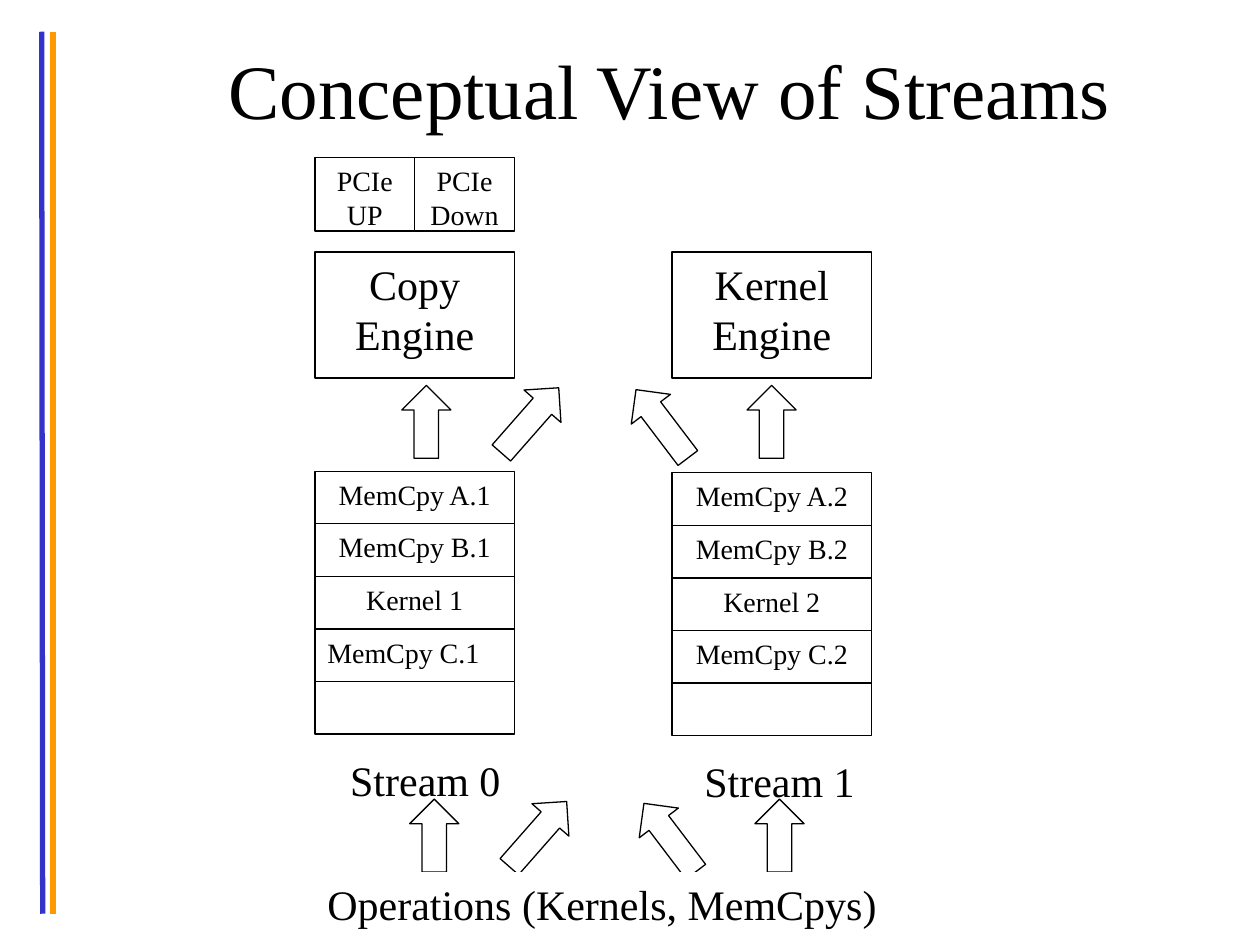
from dataclasses import dataclass

from lxml import etree
from pptx import Presentation
from pptx.dml.color import RGBColor
from pptx.enum.shapes import MSO_CONNECTOR, MSO_SHAPE
from pptx.enum.text import MSO_ANCHOR, MSO_AUTO_SIZE, PP_ALIGN
from pptx.oxml.ns import qn
from pptx.util import Cm, Pt

STRAIGHT = MSO_CONNECTOR.STRAIGHT
RECT, UP_ARROW = MSO_SHAPE.RECTANGLE, MSO_SHAPE.UP_ARROW
TOP, MIDDLE = MSO_ANCHOR.TOP, MSO_ANCHOR.MIDDLE
LEFT, CENTER = PP_ALIGN.LEFT, PP_ALIGN.CENTER
FIT_TEXT = MSO_AUTO_SIZE.SHAPE_TO_FIT_TEXT


@dataclass(frozen=True)
class Theme:
    font: str = "Times New Roman"
    ink: RGBColor = RGBColor(0x00, 0x00, 0x00)
    paper: RGBColor = RGBColor(0xFF, 0xFF, 0xFF)
    blue: RGBColor = RGBColor(0x33, 0x33, 0xCC)
    orange: RGBColor = RGBColor(0xFF, 0x99, 0x00)
    title: int = 44
    heading: int = 24
    body: int = 16
    outline: float = 0.75
    rail: int = 3


class Diagram:
    """Draws on one slide; all lengths are centimetres."""

    def __init__(self, slide, theme):
        self.shapes = slide.shapes
        self.theme = theme

    def add_text(self, shape, text, size, align, anchor=TOP, wrap=True):
        frame = shape.text_frame
        frame.word_wrap = wrap
        frame.vertical_anchor = anchor
        paragraph = frame.paragraphs[0]
        paragraph.alignment = align
        run = paragraph.add_run()
        run.text = text
        run.font.name = self.theme.font
        run.font.size = Pt(size)
        run.font.color.rgb = self.theme.ink
        return frame

    def outlined(self, kind, left, top, width, height):
        shape = self.shapes.add_shape(kind, Cm(left), Cm(top), Cm(width), Cm(height))
        shape.shadow.inherit = False
        shape.fill.background()
        shape.line.color.rgb = self.theme.ink
        shape.line.width = Pt(self.theme.outline)
        return shape

    def box(self, left, top, width, height, text="", size=None, align=CENTER):
        shape = self.outlined(RECT, left, top, width, height)
        if text:
            self.add_text(shape, text, size or self.theme.body, align)

    def arrow(self, left, top, height, angle=0):
        self.outlined(UP_ARROW, left, top, 0.99, height).rotation = angle

    def title(self, left, top, width, height, text):
        box = self.shapes.add_textbox(Cm(left), Cm(top), Cm(width), Cm(height))
        frame = self.add_text(box, text, self.theme.title, CENTER, MIDDLE)
        frame.margin_left = frame.margin_right = 0
        frame.margin_top = frame.margin_bottom = 0

    def label(self, left, top, width, height, text, filled=False):
        box = self.shapes.add_textbox(Cm(left), Cm(top), Cm(width), Cm(height))
        if filled:
            box.fill.solid()
            box.fill.fore_color.rgb = self.theme.paper
        frame = self.add_text(box, text, self.theme.heading, LEFT, wrap=False)
        frame.auto_size = FIT_TEXT

    def rail(self, x_top, x_bottom, color):
        line = self.shapes.add_connector(
            STRAIGHT, Cm(x_top), Cm(0.64), Cm(x_bottom), Cm(18.42))
        line.line.color.rgb = color
        line.line.width = Pt(self.theme.rail)
        etree.SubElement(line._element.spPr, qn("a:effectLst"))


def main():
    deck = Presentation()
    deck.slide_width, deck.slide_height = Cm(25.4), Cm(19.05)
    theme = Theme()
    diagram = Diagram(deck.slides.add_slide(deck.slide_layouts[6]), theme)

    # Side rails and title
    diagram.rail(0.84, 0.86, theme.blue)
    diagram.rail(1.07, 1.07, theme.orange)
    diagram.title(2.5, 0.2, 22, 3.18, "Conceptual View of Streams")

    # Streams: an engine above a queue of operations and a label
    column_width, slot_height = 4.02, 1.06
    copy_left, kernel_left = 6.35, 13.55
    streams = [
        ("Copy Engine", copy_left, 9.5, 6.81, "Stream 0",
         ["MemCpy A.1", "MemCpy B.1", "Kernel 1", "MemCpy C.1", ""]),
        ("Kernel Engine", kernel_left, 9.53, 13.95, "Stream 1",
         ["MemCpy A.2", "MemCpy B.2", "Kernel 2", "MemCpy C.2", ""]),
    ]
    for engine, left, queue_top, label_left, stream, operations in streams:
        diagram.box(left, 5.08, column_width, 2.54, engine, theme.heading)
        for slot, operation in enumerate(operations):
            align = LEFT if operation == "MemCpy C.1" else CENTER
            diagram.box(left, queue_top + slot * slot_height, column_width,
                        slot_height, operation, align=align)
        diagram.label(label_left, queue_top + 5.58, 3.58, 1.28, stream)

    # PCIe directions above the copy engine
    half = column_width / 2
    for side, direction in enumerate(["PCIe UP", "PCIe Down"]):
        diagram.box(copy_left + side * half, 3.18, half, 1.48, direction)

    # Arrows into the engines, then the same set into the streams
    arrows = [(8.1, 7.77, 1.47, 0), (15.06, 7.77, 1.47, 0),
              (10.19, 7.6, 1.75, 41.3), (12.85, 7.68, 1.73, 322.8)]
    for shift_x, shift_y in [(0, 0), (0.16, 8.34)]:
        for left, top, height, angle in arrows:
            diagram.arrow(left + shift_x, top + shift_y, height, angle)

    # Source of the operations, covering the arrow tails
    diagram.label(6.35, 17.58, 11.65, 1.28, "Operations (Kernels, MemCpys)", filled=True)

    deck.save("out.pptx")


if __name__ == "__main__":
    main()
